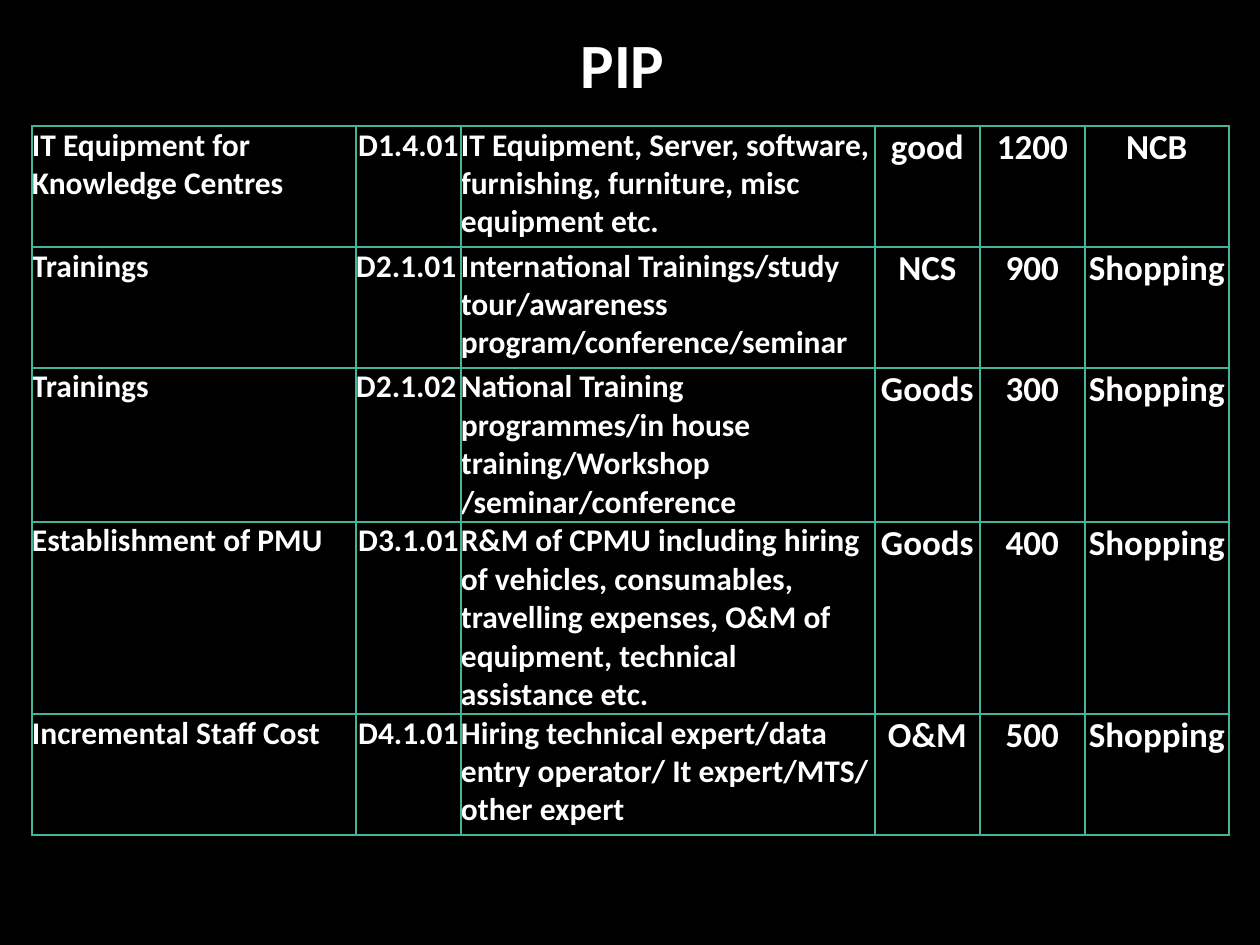
from lxml.etree import SubElement
from pptx import Presentation
from pptx.dml.color import RGBColor
from pptx.enum.text import MSO_ANCHOR, PP_ALIGN
from pptx.oxml.ns import qn
from pptx.util import Pt

TITLE = "PIP"
ACTIVITIES = [
    ("IT Equipment for Knowledge Centres", "D1.4.01",
     "IT Equipment, Server, software, furnishing, furniture, misc equipment etc.",
     "good", "1200", "NCB"),
    ("Trainings", "D2.1.01",
     "International Trainings/study tour/awareness program/conference/seminar",
     "NCS", "900", "Shopping"),
    ("Trainings", "D2.1.02",
     "National Training programmes/in house training/Workshop\n/seminar/conference",
     "Goods", "300", "Shopping"),
    ("Establishment of PMU", "D3.1.01",
     "R&M of CPMU including hiring of vehicles, consumables, travelling expenses, "
     "O&M of equipment, technical assistance etc.",
     "Goods", "400", "Shopping"),
    ("Incremental Staff Cost", "D4.1.01",
     "Hiring technical expert/data entry operator/ It expert/MTS/ other expert",
     "O&M", "500", "Shopping"),
]
COLUMN_WIDTHS = [324, 105, 414, 105, 105, 144]
ROW_HEIGHTS = [121, 121, 106, 160, 121]
CODE_COLUMN, FIRST_LARGE_COLUMN = 1, 3
LEFT_ALIGNED_CODES = {"D2.1.01", "D2.1.02"}
BLACK, WHITE, GREEN = "000000", "FFFFFF", "46B298"


def px(length):
    return round(length * 914400 / 126)


def color(value):
    return RGBColor.from_string(value)


def style_text(frame, size, align):
    frame.margin_left = frame.margin_right = frame.margin_top = frame.margin_bottom = 0
    frame.word_wrap = True
    for paragraph in frame.paragraphs:
        paragraph.alignment = align
        font = paragraph.font
        font.name, font.size, font.bold = "Calibri", Pt(size), True
        font.color.rgb = color(WHITE)


def add_borders(cell):
    properties = cell._tc.get_or_add_tcPr()
    for side in ("a:lnL", "a:lnR", "a:lnT", "a:lnB"):
        line = SubElement(properties, qn(side), w=str(Pt(1)))
        fill = SubElement(line, qn("a:solidFill"))
        SubElement(fill, qn("a:srgbClr"), val=GREEN)


def fill_cell(cell, text, column):
    cell.text = text
    large = column >= FIRST_LARGE_COLUMN
    centred = large or (column == CODE_COLUMN and text not in LEFT_ALIGNED_CODES)
    style_text(cell.text_frame, 20 if large else 18,
               PP_ALIGN.CENTER if centred else PP_ALIGN.LEFT)
    cell.margin_left = cell.margin_right = cell.margin_top = cell.margin_bottom = 0
    add_borders(cell)
    cell.fill.background()


def add_plan(slide):
    plan = slide.shapes.add_table(
        len(ACTIVITIES), len(COLUMN_WIDTHS), px(32), px(126),
        px(sum(COLUMN_WIDTHS)), px(sum(ROW_HEIGHTS))).table
    plan.first_row = plan.horz_banding = False
    for column, width in zip(plan.columns, COLUMN_WIDTHS):
        column.width = px(width)
    for row, height, activity in zip(plan.rows, ROW_HEIGHTS, ACTIVITIES):
        row.height = px(height)
        for index, (cell, text) in enumerate(zip(row.cells, activity)):
            fill_cell(cell, text, index)


def add_title(slide):
    frame = slide.shapes.add_textbox(px(3), px(32), px(1239), px(63)).text_frame
    frame.text = TITLE
    frame.vertical_anchor = MSO_ANCHOR.MIDDLE
    style_text(frame, 36, PP_ALIGN.CENTER)


def main():
    deck = Presentation()
    deck.slide_width, deck.slide_height = px(1260), px(945)
    slide = deck.slides.add_slide(deck.slide_layouts[6])
    slide.background.fill.solid()
    slide.background.fill.fore_color.rgb = color(BLACK)
    add_plan(slide)
    add_title(slide)
    deck.save("out.pptx")


if __name__ == "__main__":
    main()
